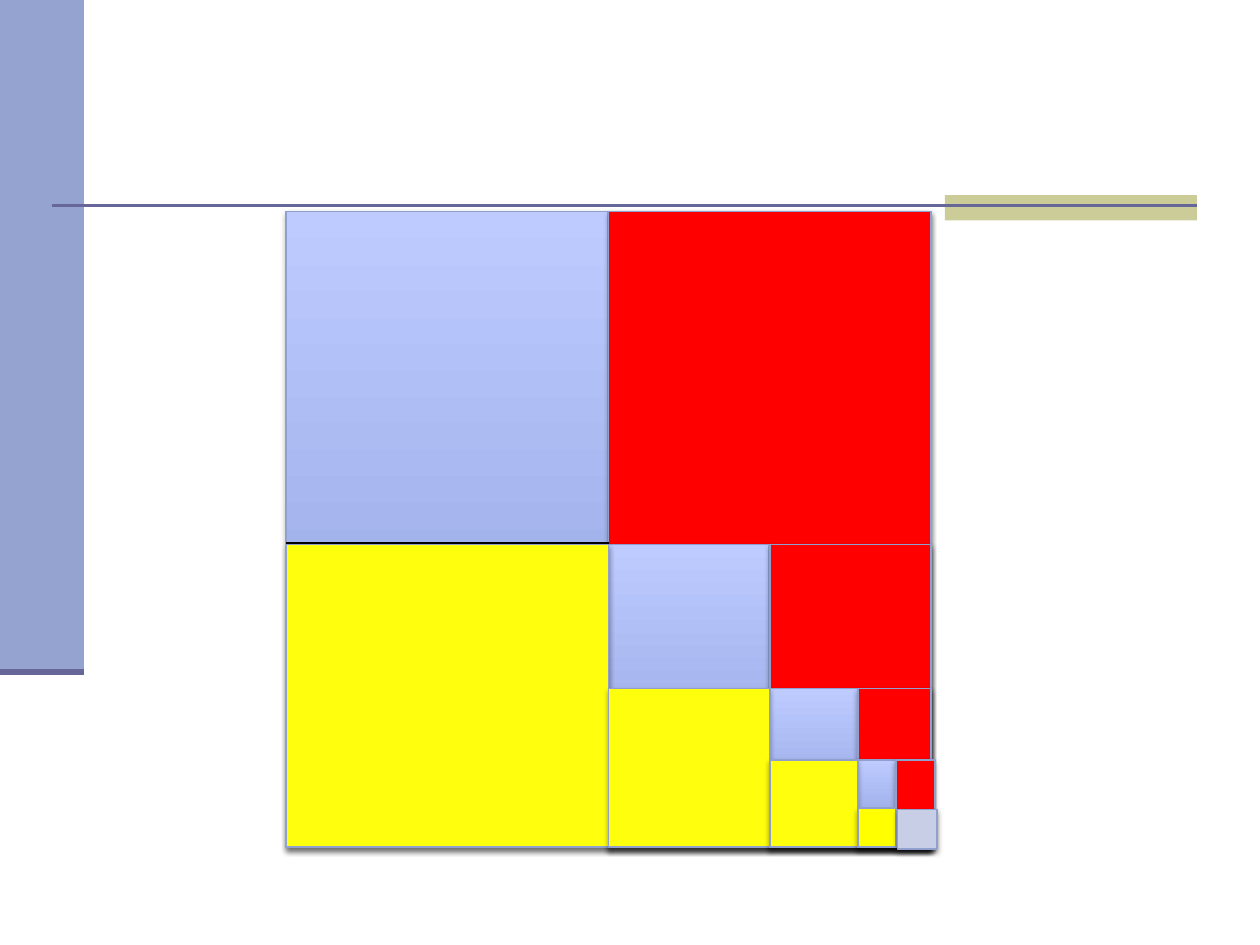
from lxml import etree
from pptx import Presentation
from pptx.dml.color import RGBColor
from pptx.enum.shapes import MSO_CONNECTOR, MSO_SHAPE
from pptx.oxml.ns import qn
from pptx.util import Pt

RECTANGLE = MSO_SHAPE.RECTANGLE
STRAIGHT = MSO_CONNECTOR.STRAIGHT

COLORS = {
    "band": "95A3D1", "tab": "CCCC99", "rule": "666699", "outline": "909FCE",
    "blue_dark": "8C9EDA", "blue_light": "BDCBFF", "red": "FF0000",
    "yellow": "FFFF0D", "last_yellow": "FFFF00", "remainder": "C8CEE5",
    "black": "000000",
}
RGB = {name: RGBColor.from_string(value) for name, value in COLORS.items()}

prs = Presentation()
prs.slide_width, prs.slide_height = Pt(720), Pt(540)
slide = prs.slides.add_slide(prs.slide_layouts[6])


def add_block(left, top, right, bottom, color, part_of_square=True):
    """Add a rectangle by its edges; color "blue" gives the vertical gradient."""
    block = slide.shapes.add_shape(
        RECTANGLE, Pt(left), Pt(top), Pt(right - left), Pt(bottom - top))
    block.shadow.inherit = False
    if color == "blue":
        block.fill.gradient()
        block.fill.gradient_angle = 90
        for stop, shade in zip(block.fill.gradient_stops, ("blue_dark", "blue_light")):
            stop.color.rgb = RGB[shade]
    else:
        block.fill.solid()
        block.fill.fore_color.rgb = RGB[color]
    if part_of_square:
        block.line.color.rgb = RGB["outline"]
        block.line.width = Pt(0.75)
        effects = block._element.spPr.find(qn("a:effectLst"))
        shadow = etree.SubElement(
            effects, qn("a:outerShdw"), blurRad=str(Pt(3.1)), dist=str(Pt(1.8)),
            dir="5400000", rotWithShape="0")
        shade = etree.SubElement(shadow, qn("a:srgbClr"), val=COLORS["black"])
        etree.SubElement(shade, qn("a:alpha"), val="35000")
    else:
        block.line.fill.background()


def add_rule(x1, y1, x2, y2, color, width):
    rule = slide.shapes.add_connector(STRAIGHT, Pt(x1), Pt(y1), Pt(x2), Pt(y2))
    rule.line.color.rgb = RGB[color]
    rule.line.width = Pt(width)
    etree.SubElement(rule._element.spPr, qn("a:effectLst"))


# Page decoration
add_block(0, 0, 48, 384, "band", part_of_square=False)
add_block(540, 111.5, 684, 126, "tab", part_of_square=False)
add_rule(30, 117.5, 684, 117.5, "rule", 1.5)
add_rule(0, 384, 48, 384, "rule", 3.5)

# Each level divides the lower right quarter of the level before it
BOTTOM, RIGHT = 484, 532
levels = [  # left, top, split, right edge of red, top of yellow, yellow
    (163.5, 121, 347.75, RIGHT, 311, "yellow"),
    (347.75, 311, 440, RIGHT, 393.25, "yellow"),
    (440, 393.25, 490.25, RIGHT, 434.25, "yellow"),
    (490.25, 434.25, 512, 534.25, 461.75, "last_yellow"),
]
for number, (left, top, split, red_right, _, _) in enumerate(levels):
    add_block(left, top, RIGHT, BOTTOM, "blue")
    if number < 2:
        add_rule(split, top, split, BOTTOM, "band", 2)
    add_block(split, top, red_right, BOTTOM, "red")

for (left, _, split, *_), divider in zip(levels, (311, 397.5, 438.5)):
    add_rule(left, divider, split, divider, "black", 2)

for left, _, split, _, yellow_top, yellow in levels:
    add_block(left, yellow_top, split, BOTTOM, yellow)
add_block(513, 462.75, 535.5, 485.25, "remainder")

prs.save("out.pptx")
